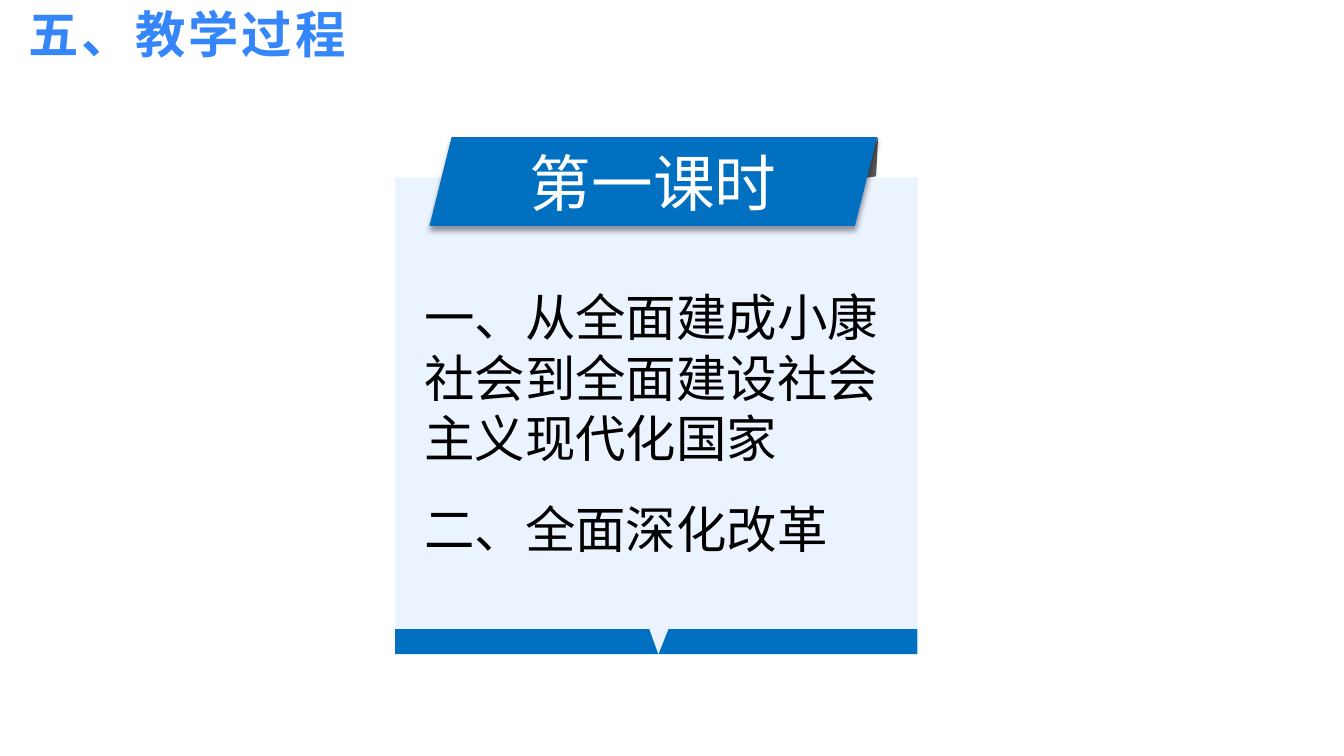
"""Build the lesson-one title card slide of the teaching process section."""
import dataclasses

import lxml.etree
import pptx
import pptx.dml.color
import pptx.enum.shapes
import pptx.enum.text
import pptx.oxml.ns
import pptx.util

Inches = pptx.util.Inches
qn = pptx.oxml.ns.qn
SHAPES = pptx.enum.shapes.MSO_SHAPE
ANCHOR = pptx.enum.text.MSO_ANCHOR


@dataclasses.dataclass(frozen=True)
class Theme:
    font: str = "Noto Sans CJK SC"
    heading: str = "3586FB"
    accent: str = "0170C1"
    card: str = "EBF3FF"
    fold: str = "595959"
    light: str = "FFFFFF"
    dark: str = "000000"
    body_size: int = 36
    banner_size: int = 44


theme = Theme()


def paint(shape, color):
    """Give a shape a flat fill without line or shadow."""
    shape.shadow.inherit = False
    shape.fill.solid()
    shape.fill.fore_color.rgb = pptx.dml.color.RGBColor.from_string(color)
    shape.line.fill.background()


def write(paragraph, text, size, color, bold=False):
    """Fill a paragraph and return its character properties element."""
    paragraph.text = text
    font = paragraph.font
    font.size = pptx.util.Pt(size)
    font.bold = bold
    font.color.rgb = pptx.dml.color.RGBColor.from_string(color)
    font.name = theme.font
    properties = paragraph._p.pPr.find(qn("a:defRPr"))
    lxml.etree.SubElement(properties, qn("a:ea"), typeface=theme.font)
    return properties


presentation = pptx.Presentation()
presentation.slide_width = Inches(13.33)
presentation.slide_height = Inches(7.5)
slide = presentation.slides.add_slide(presentation.slide_layouts[6])

heading = slide.shapes.add_textbox(Inches(0.21), Inches(0), Inches(6.37), Inches(0.66))
frame = heading.text_frame
frame.word_wrap = True
frame.vertical_anchor = ANCHOR.BOTTOM
frame.margin_left = frame.margin_right = Inches(0.07)
frame.margin_top = frame.margin_bottom = Inches(0.03)
properties = write(frame.paragraphs[0], "五、教学过程", theme.body_size, theme.heading, bold=True)
properties.set("spc", "220")

base = slide.shapes.add_shape(
    SHAPES.RECTANGLE, Inches(3.92), Inches(6.24), Inches(5.18), Inches(0.25))
paint(base, theme.accent)

card_points = [(3.92, 1.76), (9.1, 1.76), (9.1, 6.24), (6.63, 6.24),
               (6.53, 6.49), (6.44, 6.24), (3.92, 6.24)]
fold_points = [(8.71, 1.36), (8.48, 1.78), (8.69, 1.75)]
for points, color in ((card_points, theme.card), (fold_points, theme.fold)):
    corners = [(Inches(x), Inches(y)) for x, y in points]
    builder = slide.shapes.build_freeform(*corners[0])
    builder.add_line_segments(corners[1:], close=True)
    paint(builder.convert_to_shape(), color)

banner = slide.shapes.add_shape(
    SHAPES.PARALLELOGRAM, Inches(4.26), Inches(1.36), Inches(4.44), Inches(0.88))
paint(banner, theme.accent)
effects = banner._element.spPr.find(qn("a:effectLst"))
shadow = lxml.etree.SubElement(
    effects, qn("a:outerShdw"), blurRad=str(pptx.util.Pt(4)), dist=str(pptx.util.Pt(3)),
    dir="5400000", algn="t", rotWithShape="0")
shadow_color = lxml.etree.SubElement(shadow, qn("a:srgbClr"), val=theme.dark)
lxml.etree.SubElement(shadow_color, qn("a:alpha"), val="40000")
frame = banner.text_frame
frame.vertical_anchor = ANCHOR.MIDDLE
frame.paragraphs[0].alignment = pptx.enum.text.PP_ALIGN.CENTER
write(frame.paragraphs[0], "第一课时", theme.banner_size, theme.light)

topics = slide.shapes.add_textbox(Inches(4.11), Inches(2.79), Inches(4.81), Inches(2.83))
frame = topics.text_frame
frame.word_wrap = True
frame.auto_size = pptx.enum.text.MSO_AUTO_SIZE.SHAPE_TO_FIT_TEXT
write(frame.paragraphs[0], "一、从全面建成小康社会到全面建设社会主义现代化国家",
      theme.body_size, theme.dark)
second_topic = frame.add_paragraph()
second_topic.line_spacing = 1.5
write(second_topic, "二、全面深化改革", theme.body_size, theme.dark)

presentation.save("out.pptx")
